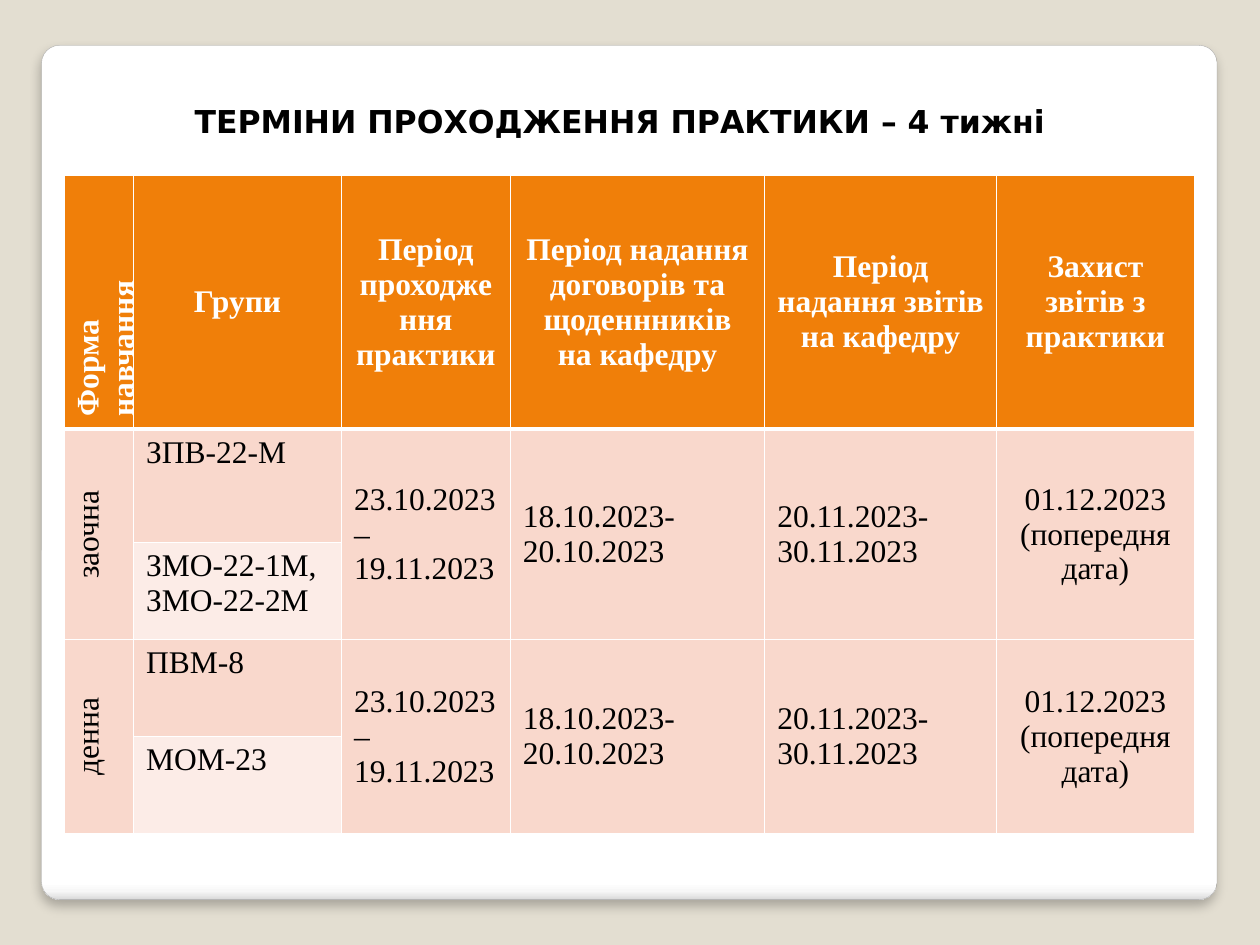
from lxml import etree
from pptx import Presentation
from pptx import util as u
from pptx.dml.color import RGBColor
from pptx.enum import shapes, text
from pptx.oxml import parse_xml
from pptx.oxml.ns import nsdecls, qn

BACKGROUND = RGBColor(0xE3, 0xDE, 0xD1)
PANEL_LINE = RGBColor(0xA4, 0xA4, 0xA4)
BLACK = RGBColor(0x00, 0x00, 0x00)
WHITE = RGBColor(0xFF, 0xFF, 0xFF)
ORANGE = RGBColor(0xF0, 0x7F, 0x09)
PINK = RGBColor(0xF9, 0xD8, 0xCC)
PALE_PINK = RGBColor(0xFC, 0xEC, 0xE7)
PANEL_STOPS = [(0, "FFFFFF"), (98, "FFFFFF"), (99, "F7F7F7"), (100, "DADADA")]

TITLE = "ТЕРМІНИ ПРОХОДЖЕННЯ ПРАКТИКИ – 4 тижні"
COLUMN_WIDTHS = [0.55, 1.65, 1.34, 2.02, 1.84, 1.57]
ROW_HEIGHTS = [1.7, 0.9, 0.77, 0.77, 0.77]
HEADERS = [
    "Форма навчання",
    "Групи",
    "Період проходження практики",
    "Період надання договорів та щоденнників на кафедру",
    "Період надання звітів на кафедру",
    "Захист звітів з практики",
]
STUDY_FORMS = [
    ("заочна", ["ЗПВ-22-М", "ЗМО-22-1М, ЗМО-22-2М"]),
    ("денна", ["ПВМ-8", "МОМ-23"]),
]
DATES = [
    "23.10.2023 – 19.11.2023",
    "18.10.2023-20.10.2023",
    "20.11.2023-30.11.2023",
    "01.12.2023 (попередня дата)",
]
LEFT, CENTER = text.PP_ALIGN.LEFT, text.PP_ALIGN.CENTER
TOP, MIDDLE = text.MSO_ANCHOR.TOP, text.MSO_ANCHOR.MIDDLE


def add_run(paragraph, wording, font_name, color, bold):
    """Add one 18-point run to a paragraph."""
    run = paragraph.add_run()
    run.text = wording
    run.font.name = font_name
    run.font.size = u.Pt(18)
    run.font.bold = bold
    run.font.color.rgb = color


def add_panel(slide, left, top, width, height):
    """Add the rounded white panel behind everything else."""
    panel = slide.shapes.add_shape(
        shapes.MSO_SHAPE.ROUNDED_RECTANGLE, left, top, width, height)
    panel.adjustments[0] = 0.021
    panel.line.color.rgb = PANEL_LINE
    panel.line.width = u.Pt(0.16)
    stops = "".join(
        f'<a:gs pos="{position * 1000}"><a:srgbClr val="{color}"/></a:gs>'
        for position, color in PANEL_STOPS)
    properties = panel._element.spPr
    properties.find(qn("a:prstGeom")).addnext(parse_xml(
        f'<a:gradFill {nsdecls("a")} rotWithShape="1"><a:gsLst>{stops}</a:gsLst>'
        '<a:lin ang="5400000" scaled="0"/></a:gradFill>'))
    properties.append(parse_xml(
        f'<a:effectLst {nsdecls("a")}><a:outerShdw blurRad="{u.Pt(6)}" '
        f'dist="{u.Pt(4)}" dir="5400000" algn="t" rotWithShape="0">'
        '<a:srgbClr val="000000"><a:alpha val="25000"/></a:srgbClr>'
        '</a:outerShdw></a:effectLst>'))
    slide.shapes._spTree.insert(2, panel._element)


def add_title(slide, left, top, width, height):
    """Place and format the title placeholder."""
    title = slide.shapes.title
    title.left, title.top, title.width, title.height = left, top, width, height
    frame = title.text_frame
    frame.word_wrap = True
    frame.auto_size = text.MSO_AUTO_SIZE.SHAPE_TO_FIT_TEXT
    frame.vertical_anchor = TOP
    paragraph = frame.paragraphs[0]
    paragraph.alignment = CENTER
    add_run(paragraph, TITLE, "DejaVu Sans", BLACK, True)


def style_cell(cell, fill, top_width, bottom_width):
    """Give a cell white borders and a solid fill."""
    properties = cell._tc.get_or_add_tcPr()
    widths = {"lnL": 1, "lnR": 1, "lnT": top_width, "lnB": bottom_width}
    for side, width in widths.items():
        line = etree.SubElement(properties, qn(f"a:{side}"), w=str(u.Pt(width)))
        solid = etree.SubElement(line, qn("a:solidFill"))
        etree.SubElement(solid, qn("a:srgbClr"), val=str(WHITE))
    cell.fill.solid()
    cell.fill.fore_color.rgb = fill


def write_cell(cell, wording, alignment, anchor, header=False, vertical=False):
    """Write the wording of one cell."""
    cell.vertical_anchor = anchor
    if vertical:
        cell._tc.get_or_add_tcPr().set("vert", "vert270")
    paragraph = cell.text_frame.paragraphs[0]
    paragraph.alignment = alignment
    add_run(paragraph, wording, "Times New Roman", WHITE if header else BLACK, header)


def add_schedule(slide, left, top, width, height):
    """Add the table of practice dates by form of study."""
    table = slide.shapes.add_table(
        len(ROW_HEIGHTS), len(COLUMN_WIDTHS), left, top, width, height).table
    table.first_row = table.horz_banding = False
    for column, column_width in zip(table.columns, COLUMN_WIDTHS):
        column.width = u.Inches(column_width)
    for row_index, row_height in enumerate(ROW_HEIGHTS):
        table.rows[row_index].height = u.Inches(row_height)
        for column_index in range(len(COLUMN_WIDTHS)):
            pale = column_index == 1 and row_index in (2, 4)
            fill = ORANGE if row_index == 0 else PALE_PINK if pale else PINK
            style_cell(table.cell(row_index, column_index), fill,
                       3 if row_index == 1 else 1, 3 if row_index == 0 else 1)

    for index, header in enumerate(HEADERS):
        first = index == 0
        write_cell(table.cell(0, index), header, LEFT if first else CENTER,
                   TOP if first else MIDDLE, header=True, vertical=first)

    for form_index, (form, groups) in enumerate(STUDY_FORMS):
        row = 1 + 2 * form_index
        for offset, group in enumerate(groups):
            write_cell(table.cell(row + offset, 1), group, LEFT, TOP)
        for column in (0, 2, 3, 4, 5):
            table.cell(row, column).merge(table.cell(row + 1, column))
        write_cell(table.cell(row, 0), form, CENTER, MIDDLE, vertical=True)
        for column, date in enumerate(DATES, start=2):
            write_cell(table.cell(row, column), date,
                       CENTER if column == 5 else LEFT, MIDDLE)


def main():
    """Build and save the slide."""
    presentation = Presentation()
    presentation.slide_width = u.Inches(10)
    presentation.slide_height = u.Inches(7.5)
    slide = presentation.slides.add_slide(presentation.slide_layouts[5])
    slide.background.fill.solid()
    slide.background.fill.fore_color.rgb = BACKGROUND
    add_panel(slide, u.Inches(0.33), u.Inches(0.36), u.Inches(9.33), u.Inches(6.78))
    add_title(slide, u.Inches(0.51), u.Inches(0.76), u.Inches(8.82), u.Inches(0.4))
    add_schedule(slide, u.Inches(0.51), u.Inches(1.39), u.Inches(8.98), u.Inches(4.91))
    presentation.save("out.pptx")


if __name__ == "__main__":
    main()
